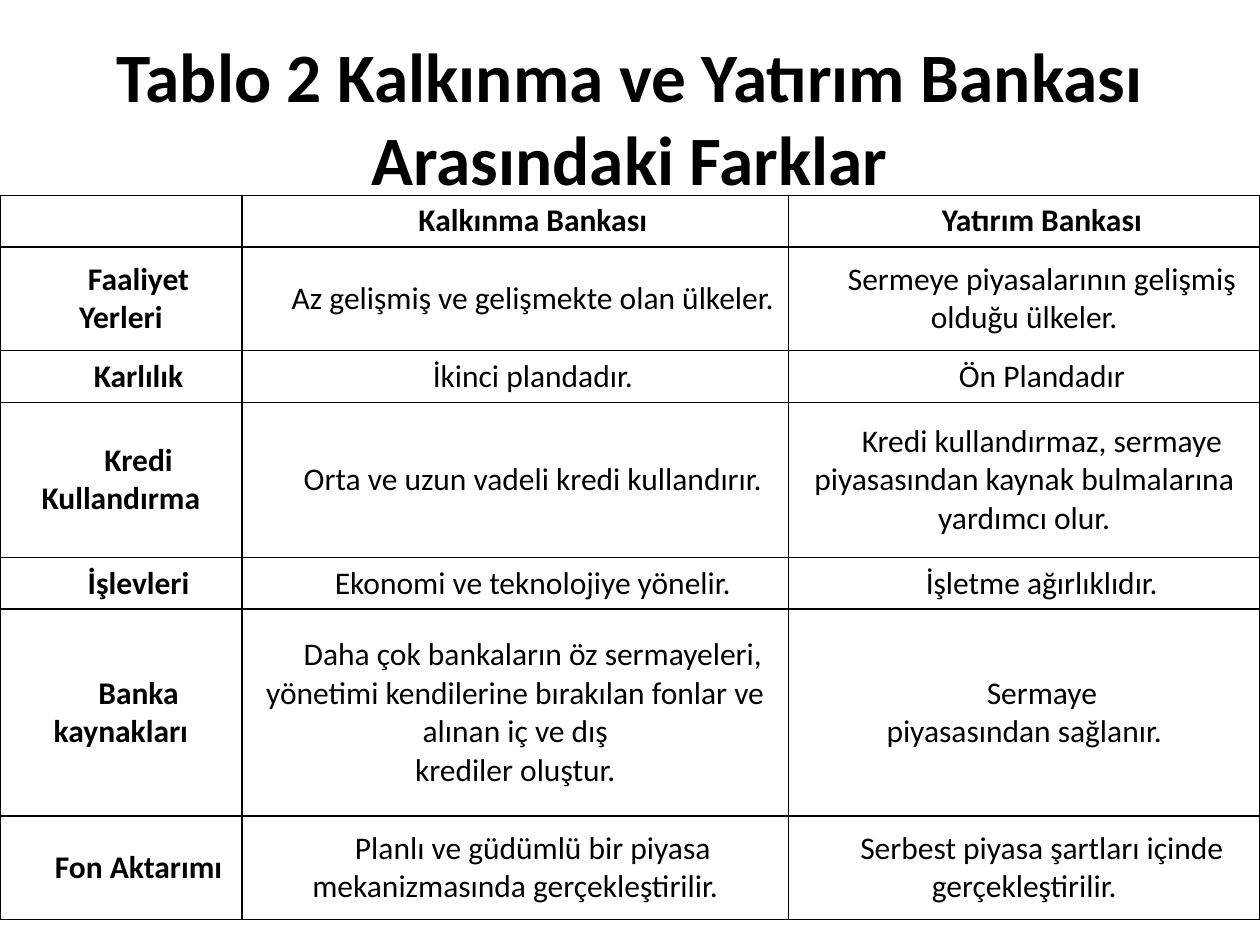
from dataclasses import dataclass

import pptx
import pptx.dml.color
import pptx.enum.text
import pptx.oxml
import pptx.oxml.ns
import pptx.util

WIDTH, HEIGHT = 10, 7.5
FONT, BLACK = "Calibri", "000000"
TABLE_TOP, TABLE_HEIGHT = 1.55, 5.75
COLUMN_SHARES = (0.192, 0.434, 0.374)


@dataclass
class Row:
    lines: int
    label: str
    development: str
    investment: str


ROWS = [
    Row(1, "", "Kalkınma Bankası", "Yatırım Bankası"),
    Row(2, "Faaliyet Yerleri", "Az gelişmiş ve gelişmekte olan ülkeler.",
        "Sermeye piyasalarının gelişmiş olduğu ülkeler."),
    Row(1, "Karlılık", "İkinci plandadır.", "Ön Plandadır"),
    Row(3, "Kredi Kullandırma", "Orta ve uzun vadeli kredi kullandırır.",
        "Kredi kullandırmaz, sermaye piyasasından kaynak bulmalarına yardımcı olur."),
    Row(1, "İşlevleri", "Ekonomi ve teknolojiye yönelir.", "İşletme ağırlıklıdır."),
    Row(4, "Banka kaynakları",
        "Daha çok bankaların öz sermayeleri, yönetimi kendilerine bırakılan fonlar ve "
        "alınan iç ve dış\nkrediler oluştur.",
        "Sermaye\npiyasasından sağlanır."),
    Row(2, "Fon Aktarımı", "Planlı ve güdümlü bir piyasa mekanizmasında gerçekleştirilir.",
        "Serbest piyasa şartları içinde gerçekleştirilir."),
]


def rgb(color: str) -> pptx.dml.color.RGBColor:
    return pptx.dml.color.RGBColor.from_string(color)


def write(tf, text: str, *, size: float = 18, bold: bool = False,
          color: str = BLACK, indent: float = 0) -> None:
    """Write one centred paragraph; a newline becomes a line break."""
    p = tf.paragraphs[0]
    p.alignment = pptx.enum.text.PP_ALIGN.CENTER
    if indent:
        pPr = p._p.get_or_add_pPr()
        pPr.set("marL", "0")
        pPr.set("indent", str(pptx.util.Inches(indent)))
    for i, line in enumerate(text.split("\n")):
        if i:
            p.add_line_break()
        r = p.add_run()
        r.text = line
        r.font.name = FONT
        r.font.size = pptx.util.Pt(size)
        r.font.bold = bold
        r.font.color.rgb = rgb(color)


def add_borders(cell, color: str = BLACK, width: float = 1) -> None:
    tcPr = cell._tc.get_or_add_tcPr()
    for i, side in enumerate(("lnL", "lnR", "lnT", "lnB")):
        tcPr.insert(i, pptx.oxml.parse_xml(
            f'<a:{side} {pptx.oxml.ns.nsdecls("a")} w="{pptx.util.Pt(width)}">'
            f'<a:solidFill><a:srgbClr val="{color}"/></a:solidFill></a:{side}>'))


def add_title(slide, text: str) -> None:
    sp = slide.shapes.add_textbox(*map(
        pptx.util.Inches, (0.05 * WIDTH, 0.04 * HEIGHT, 0.9 * WIDTH, 1.25)))
    tf = sp.text_frame
    tf.word_wrap = True
    tf.vertical_anchor = pptx.enum.text.MSO_ANCHOR.MIDDLE
    write(tf, text, size=39.6, bold=True)


def fill_cell(cell, text: str, bold: bool) -> None:
    cell.fill.background()
    cell.vertical_anchor = pptx.enum.text.MSO_ANCHOR.MIDDLE
    cell.margin_left = cell.margin_right = pptx.util.Inches(0.07)
    cell.margin_top = cell.margin_bottom = 0
    add_borders(cell)
    if text:
        write(cell.text_frame, text, bold=bold, indent=0.28)


def add_comparison(slide, rows: list[Row]) -> None:
    """Draw the table, with row heights in proportion to their line counts."""
    table = slide.shapes.add_table(
        len(rows), len(COLUMN_SHARES), 0, pptx.util.Inches(TABLE_TOP),
        pptx.util.Inches(WIDTH), pptx.util.Inches(TABLE_HEIGHT)).table
    table.first_row = table.horz_banding = False
    for column, share in zip(table.columns, COLUMN_SHARES):
        column.width = pptx.util.Inches(share * WIDTH)
    line_height = TABLE_HEIGHT / sum(row.lines for row in rows)
    for i, row in enumerate(rows):
        table.rows[i].height = pptx.util.Inches(row.lines * line_height)
        for j, text in enumerate((row.label, row.development, row.investment)):
            fill_cell(table.cell(i, j), text, bold=i == 0 or j == 0)


def main() -> None:
    prs = pptx.Presentation()
    prs.slide_width = pptx.util.Inches(WIDTH)
    prs.slide_height = pptx.util.Inches(HEIGHT)
    slide = prs.slides.add_slide(prs.slide_layouts[6])
    add_title(slide, "Tablo 2 Kalkınma ve Yatırım Bankası Arasındaki Farklar")
    add_comparison(slide, ROWS)
    prs.save("out.pptx")


if __name__ == "__main__":
    main()
